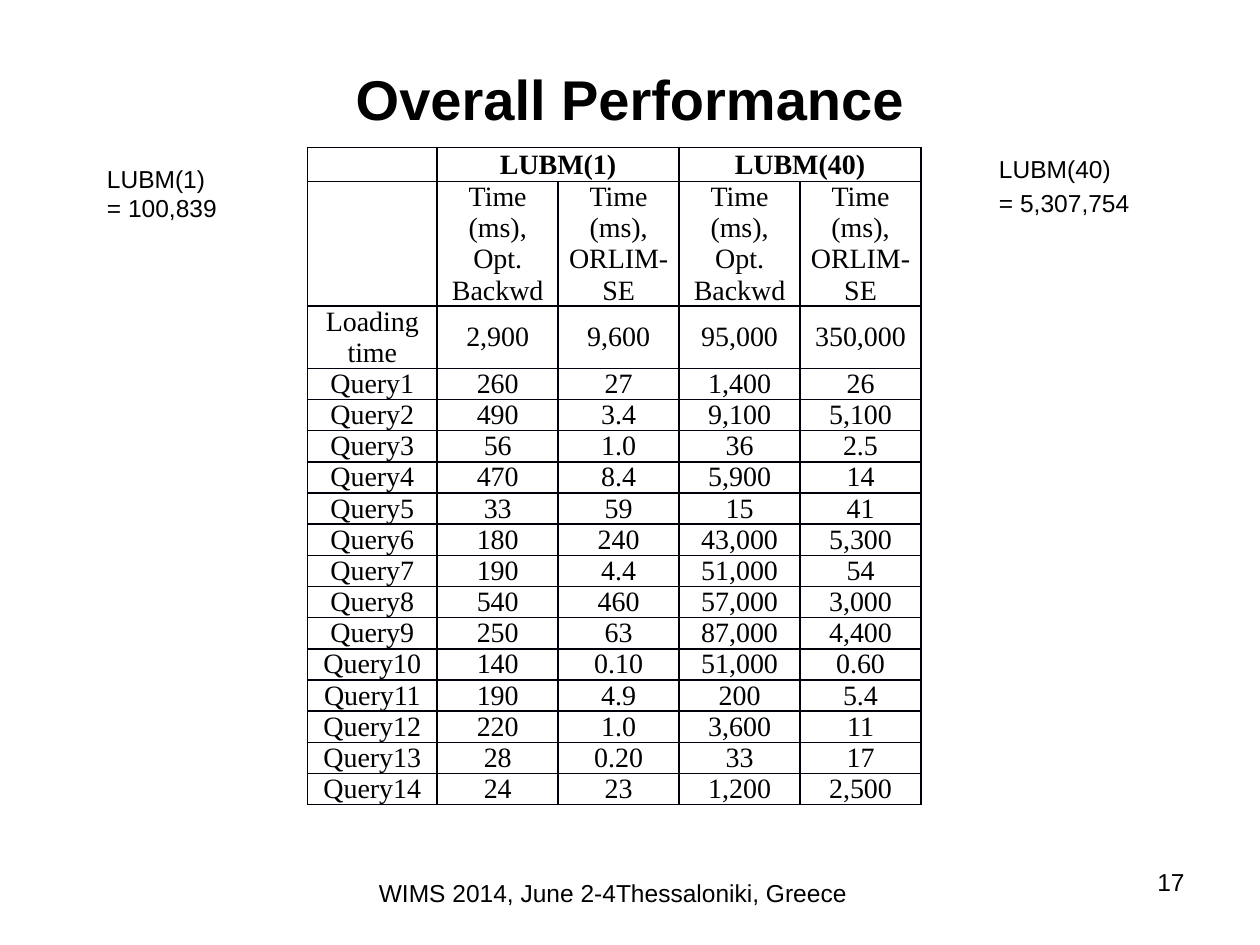
from dataclasses import dataclass

from lxml.etree import SubElement
from pptx import Presentation
from pptx.dml.color import RGBColor
from pptx.enum.text import MSO_ANCHOR as Anchor, MSO_AUTO_SIZE as AutoSize, PP_ALIGN as Align
from pptx.oxml.ns import qn
from pptx.util import Inches, Pt


@dataclass(frozen=True)
class Theme:
    ink: str = "000000"
    border: str = "00000A"
    border_width: int = Pt(1)
    sans: str = "Arial"
    serif: str = "Times New Roman"
    title_size: int = 32
    table_size: int = 16
    note_size: int = 14


THEME = Theme()

TIMING_HEADS = ["Time (ms),\nOpt. Backwd", "Time (ms),\nORLIM-SE"]
QUERY_TIMES = [
    ("260", "27", "1,400", "26"),
    ("490", "3.4", "9,100", "5,100"),
    ("56", "1.0", "36", "2.5"),
    ("470", "8.4", "5,900", "14"),
    ("33", "59", "15", "41"),
    ("180", "240", "43,000", "5,300"),
    ("190", "4.4", "51,000", "54"),
    ("540", "460", "57,000", "3,000"),
    ("250", "63", "87,000", "4,400"),
    ("140", "0.10", "51,000", "0.60"),
    ("190", "4.9", "200", "5.4"),
    ("220", "1.0", "3,600", "11"),
    ("28", "0.20", "33", "17"),
    ("24", "23", "1,200", "2,500"),
]
ROWS = [
    ("", "LUBM(1)", "", "LUBM(40)", ""),
    ("", *TIMING_HEADS, *TIMING_HEADS),
    ("Loading time", "2,900", "9,600", "95,000", "350,000"),
    *((f"Query{number}", *times) for number, times in enumerate(QUERY_TIMES, 1)),
]
COLUMN_WIDTHS = [1.03] + [0.96] * 4
ROW_HEIGHTS = [0.2, 0.6, 0.4] + [0.2] * len(QUERY_TIMES)


def write_text(frame, text, *, size, font=THEME.sans, bold=False,
               align=Align.LEFT, space_before=0):
    """Fill a text frame; a newline starts a paragraph, a vertical tab a line."""
    frame.text = text
    for paragraph in frame.paragraphs:
        paragraph.alignment = align
        paragraph.space_before = Pt(space_before)
        for run in paragraph.runs:
            run.font.size = Pt(size)
            run.font.name = font
            run.font.bold = bold
            run.font.color.rgb = RGBColor.from_string(THEME.ink)
        if not paragraph.runs:
            # An empty paragraph takes its height from its end mark
            SubElement(paragraph._p, qn("a:endParaRPr"), sz=str(size * 100))


def add_title(slide, text):
    title = slide.shapes.title
    title.left, title.top = Inches(0.5), Inches(0.3)
    title.width, title.height = Inches(9), Inches(0.95)
    title.text_frame.vertical_anchor = Anchor.MIDDLE
    write_text(title.text_frame, text, size=THEME.title_size, bold=True,
               align=Align.CENTER)


def add_note(slide, text, left, top, width, height, grow=False, **text_format):
    note = slide.shapes.add_textbox(*map(Inches, (left, top, width, height)))
    note.text_frame.word_wrap = True
    if grow:
        note.text_frame.auto_size = AutoSize.SHAPE_TO_FIT_TEXT
    write_text(note.text_frame, text, size=THEME.note_size, **text_format)


def draw_borders(cell):
    properties = cell._tc.get_or_add_tcPr()
    for side in ("lnL", "lnR", "lnT", "lnB"):
        line = SubElement(properties, qn(f"a:{side}"), w=str(THEME.border_width))
        fill = SubElement(line, qn("a:solidFill"))
        SubElement(fill, qn("a:srgbClr"), val=THEME.border)


def format_cell(cell, text, bold):
    cell.margin_left = cell.margin_right = Inches(0.06)
    cell.margin_top = cell.margin_bottom = 0
    cell.vertical_anchor = Anchor.MIDDLE
    draw_borders(cell)
    cell.fill.background()
    write_text(cell.text_frame, text, size=THEME.table_size, font=THEME.serif,
               bold=bold, align=Align.CENTER)


def add_timing_table(slide, left, top, height):
    table_frame = slide.shapes.add_table(
        len(ROWS), len(COLUMN_WIDTHS), Inches(left), Inches(top),
        Inches(sum(COLUMN_WIDTHS)), Inches(height))
    table = table_frame.table
    table.first_row = table.horz_banding = False
    for column, width in zip(table.columns, COLUMN_WIDTHS):
        column.width = Inches(width)
    for row, row_height in zip(table.rows, ROW_HEIGHTS):
        row.height = Inches(row_height)
    table_frame.height = Inches(height)

    for row_index, values in enumerate(ROWS):
        for column_index, value in enumerate(values):
            format_cell(table.cell(row_index, column_index), value,
                        bold=row_index == 0)
    # Each dataset heading spans its two timing columns
    for first in (1, 3):
        table.cell(0, first).merge(table.cell(0, first + 1))


def main():
    deck = Presentation()
    deck.slide_width, deck.slide_height = Inches(10), Inches(7.5)
    slide = deck.slides.add_slide(deck.slide_layouts[5])

    # Title and results
    add_title(slide, "Overall Performance")
    add_timing_table(slide, 2.44, 1.17, 5.6)

    # Footer and page number
    add_note(slide, "WIMS 2014, June 2-4Thessaloniki, Greece",
             2.74, 6.92, 4.25, 0.43, align=Align.CENTER)
    add_note(slide, "17", 7.17, 6.83, 2.33, 0.52, align=Align.RIGHT)

    # Dataset sizes
    add_note(slide, "LUBM(1)\v= 100,839", 0.75, 1.25, 1.08, 1.14,
             grow=True, space_before=3)
    add_note(slide, "LUBM(40)\n= 5,307,754", 7.83, 1.17, 1.42, 0.62,
             grow=True, space_before=3)

    deck.save("out.pptx")


if __name__ == "__main__":
    main()
